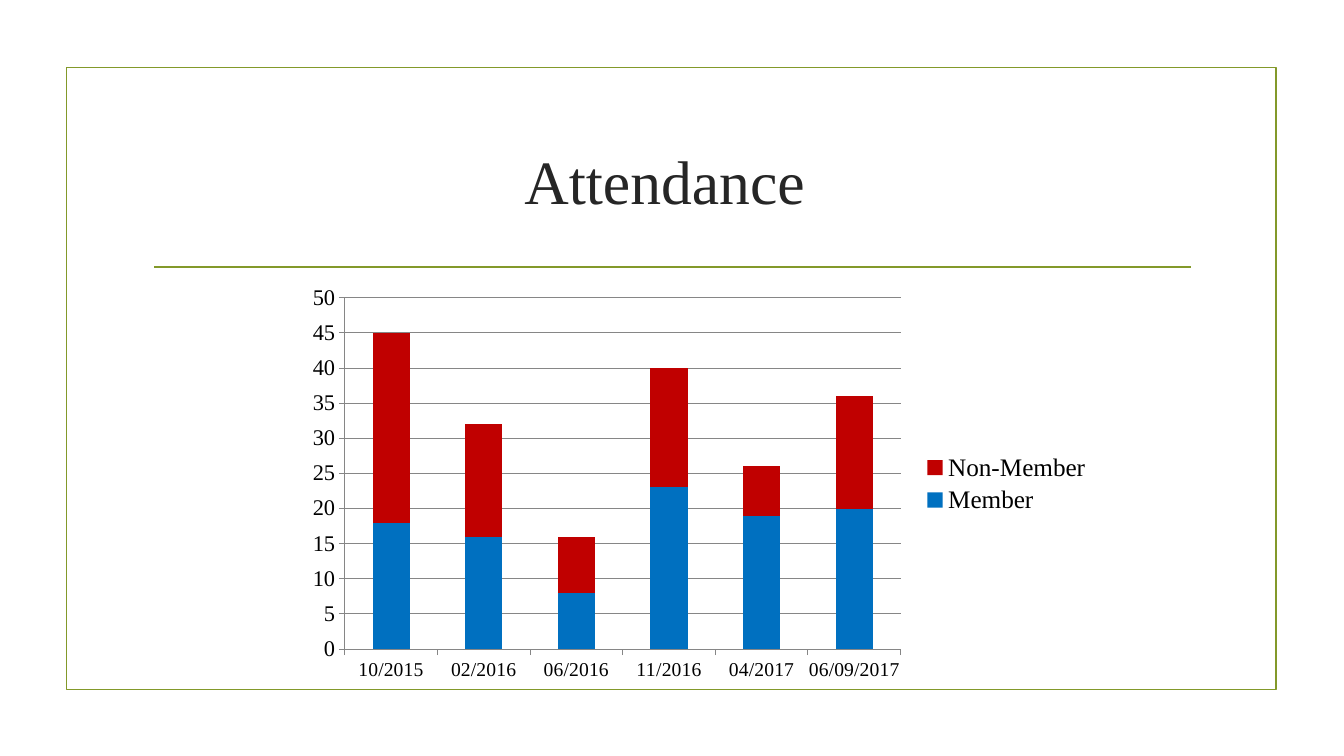
from dataclasses import dataclass

from lxml import etree
from pptx import Presentation
from pptx.chart.data import CategoryChartData
from pptx.dml.color import RGBColor
from pptx.enum.chart import XL_CHART_TYPE, XL_LEGEND_POSITION, XL_TICK_MARK
from pptx.enum.shapes import MSO_CONNECTOR, MSO_SHAPE
from pptx.enum.text import MSO_ANCHOR, PP_ALIGN
from pptx.oxml import parse_xml
from pptx.oxml.ns import nsdecls, qn
from pptx.util import Inches, Pt

STACKED = XL_CHART_TYPE.COLUMN_STACKED
LEGEND_RIGHT = XL_LEGEND_POSITION.RIGHT
TICK_OUT = XL_TICK_MARK.OUTSIDE
RECT = MSO_SHAPE.RECTANGLE
STRAIGHT = MSO_CONNECTOR.STRAIGHT
MIDDLE = MSO_ANCHOR.MIDDLE
CENTER = PP_ALIGN.CENTER

FONT = "Times New Roman"
OLIVE, DARK, BLACK, GREY = "83992A", "262626", "000000", "868686"


@dataclass
class Series:
    name: str
    values: tuple[int, ...]
    color: str


DATES = ("10/2015", "02/2016", "06/2016", "11/2016", "04/2017", "06/09/2017")
ATTENDANCE = (
    Series("Member", (18, 16, 8, 23, 19, 20), "0070C0"),
    Series("Non-Member", (27, 16, 8, 17, 7, 16), "C00000"),
)


def rgb(color: str) -> RGBColor:
    return RGBColor.from_string(color)


def set_line(line, color: str, width: float) -> None:
    line.color.rgb = rgb(color)
    line.width = Pt(width)


def set_font(font, size: float, color: str) -> None:
    font.name = FONT
    font.size = Pt(size)
    font.color.rgb = rgb(color)


def add_frame(s) -> None:
    sp = s.shapes.add_shape(RECT, Inches(0.66), Inches(0.67), Inches(12), Inches(6.17))
    sp.shadow.inherit = False
    sp.fill.background()
    set_line(sp.line, OLIVE, 1.25)


def add_rule(s) -> None:
    y = Inches(2.65)
    cxn = s.shapes.add_connector(STRAIGHT, Inches(1.53), y, Inches(11.81), y)
    set_line(cxn.line, OLIVE, 1.25)
    etree.SubElement(cxn.element.spPr, qn("a:effectLst"))


def add_title(s) -> None:
    sp = s.shapes.add_textbox(Inches(1.42), Inches(1.07), Inches(10.5), Inches(1.43))
    tf = sp.text_frame
    tf.word_wrap = True
    tf.vertical_anchor = MIDDLE
    p = tf.paragraphs[0]
    p.alignment = CENTER
    r = p.add_run()
    r.text = "Attendance "
    set_font(r.font, 44, DARK)


def style_axis(axis, size: float) -> None:
    axis.major_tick_mark = TICK_OUT
    set_font(axis.tick_labels.font, size, BLACK)
    set_line(axis.format.line, GREY, 0.75)


def set_plot_area(chart, x: float, y: float, w: float, h: float) -> None:
    """Place the inner plot area, in fractions of the chart's size."""
    plot_area = chart.element.find(".//" + qn("c:plotArea"))
    for old in plot_area.findall(qn("c:layout")):
        plot_area.remove(old)
    plot_area.insert(0, parse_xml(
        f'<c:layout {nsdecls("c")}><c:manualLayout><c:layoutTarget val="inner"/>'
        '<c:xMode val="edge"/><c:yMode val="edge"/>'
        f'<c:x val="{x}"/><c:y val="{y}"/><c:w val="{w}"/><c:h val="{h}"/>'
        "</c:manualLayout></c:layout>"))


def add_attendance_chart(s) -> None:
    data = CategoryChartData()
    data.categories = DATES
    for series in ATTENDANCE:
        data.add_series(series.name, series.values)
    chart = s.shapes.add_chart(
        STACKED, Inches(2.94), Inches(2.75), Inches(7.99), Inches(4.1), data).chart
    set_font(chart.font, 10, BLACK)
    chart.has_title = False

    plot = chart.plots[0]
    plot.vary_by_categories = False
    plot.gap_width = 150
    plot.overlap = 100
    for bars, series in zip(plot.series, ATTENDANCE):
        bars.format.fill.solid()
        bars.format.fill.fore_color.rgb = rgb(series.color)

    style_axis(chart.category_axis, 14)
    axis = chart.value_axis
    style_axis(axis, 16)
    axis.minimum_scale, axis.maximum_scale, axis.major_unit = 0, 50, 5
    set_line(axis.major_gridlines.format.line, GREY, 0.75)

    chart.has_legend = True
    chart.legend.position = LEGEND_RIGHT
    chart.legend.include_in_layout = False
    set_font(chart.legend.font, 18, BLACK)
    set_plot_area(chart, 0.06, 0.05, 0.69, 0.85)


def main() -> None:
    prs = Presentation()
    prs.slide_width, prs.slide_height = Inches(13.33), Inches(7.5)
    s = prs.slides.add_slide(prs.slide_layouts[6])
    add_frame(s)
    add_rule(s)
    add_title(s)
    add_attendance_chart(s)
    prs.save("out.pptx")


if __name__ == "__main__":
    main()
